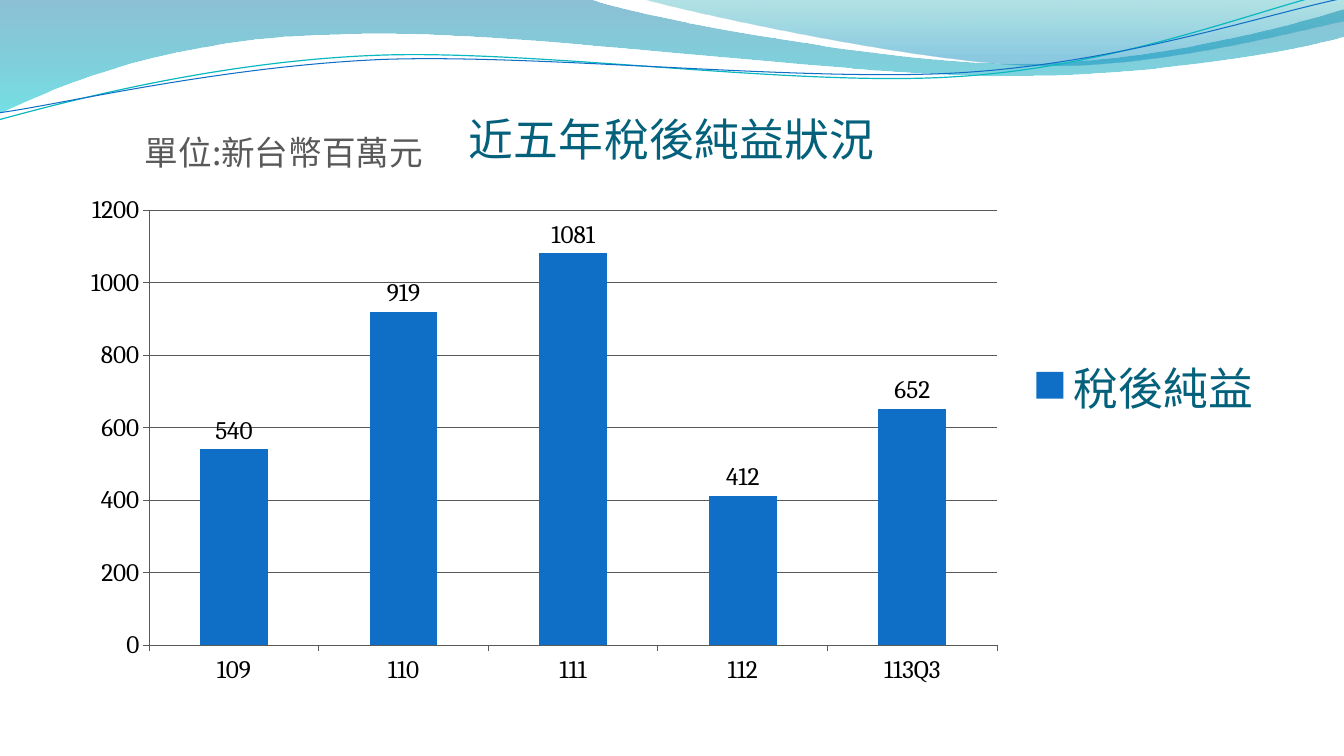
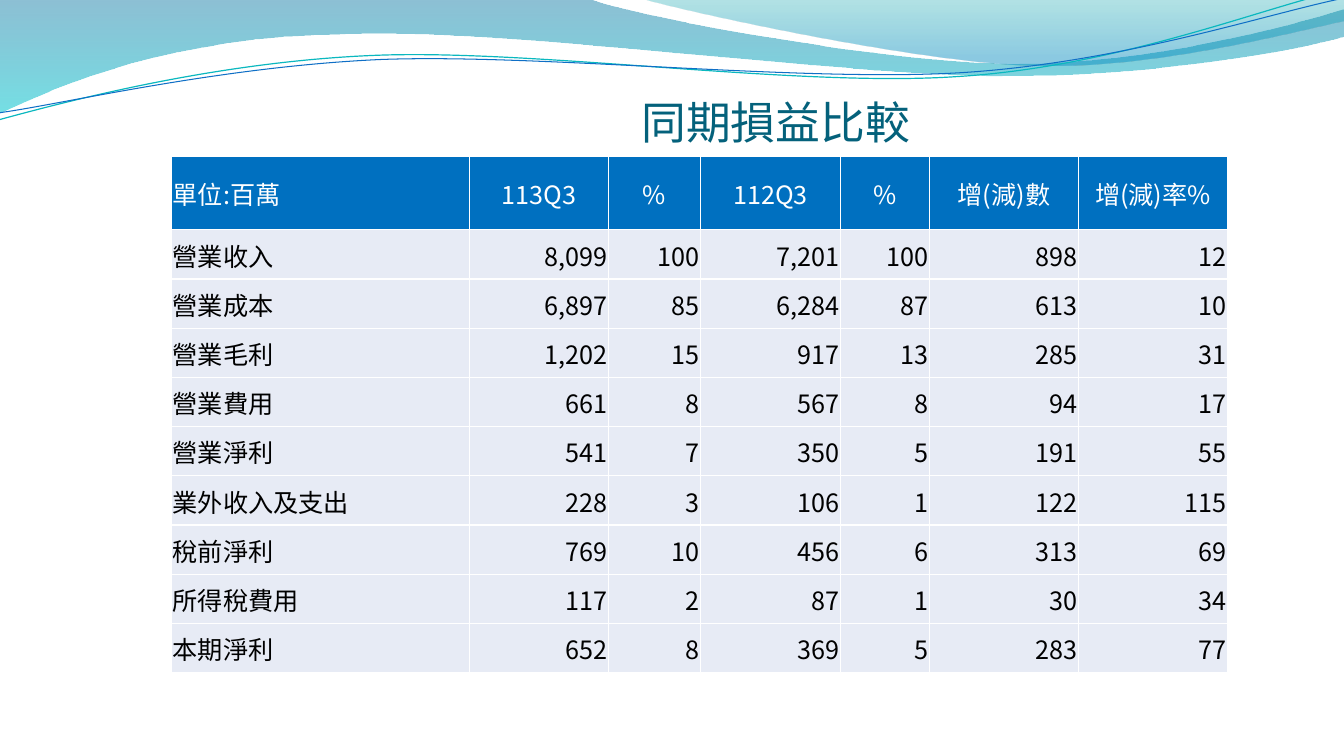
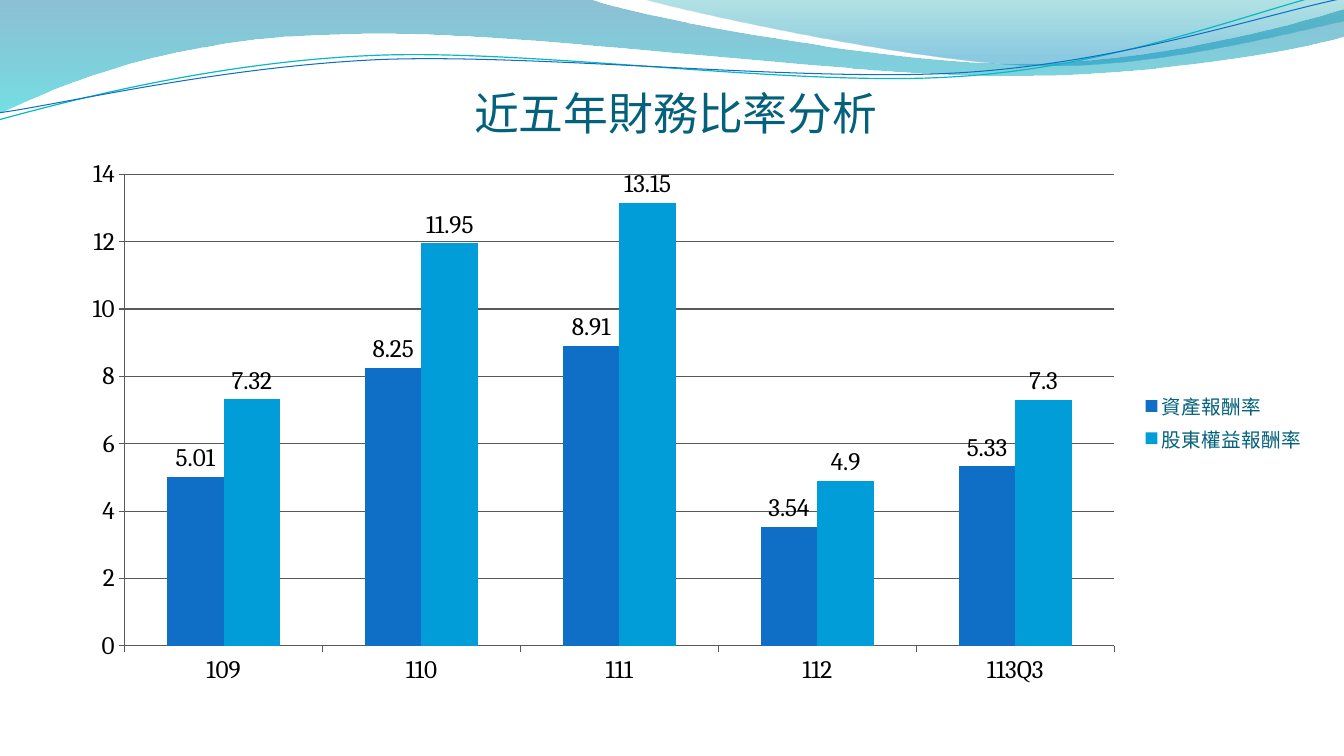
from dataclasses import dataclass
from lxml import etree
from pptx import Presentation
from pptx.chart.data import CategoryChartData
from pptx.dml.color import RGBColor
from pptx.enum.chart import XL_CHART_TYPE, XL_LABEL_POSITION, XL_LEGEND_POSITION, XL_TICK_MARK
from pptx.enum.text import MSO_ANCHOR, PP_ALIGN
from pptx.oxml.ns import qn
from pptx.util import Cm, Pt

LEFT, MID, RIGHT = PP_ALIGN.LEFT, PP_ALIGN.CENTER, PP_ALIGN.RIGHT
TOP, CENTER, BOTTOM = MSO_ANCHOR.TOP, MSO_ANCHOR.MIDDLE, MSO_ANCHOR.BOTTOM
COLUMN = XL_CHART_TYPE.COLUMN_CLUSTERED
OUT_END = XL_LABEL_POSITION.OUTSIDE_END
LEGEND_R = XL_LEGEND_POSITION.RIGHT
TICK_OUT = XL_TICK_MARK.OUTSIDE


@dataclass(frozen=True)
class Theme:
    font: str = "Noto Sans CJK SC"
    num: str = "Cambria"
    title: str = "04617B"
    grey: str = "595959"
    black: str = "000000"
    white: str = "FFFFFF"
    head: str = "0070C0"
    body: str = "E7EBF5"
    bars: tuple = ("0F6FC6", "009DD9")
    big: int = 32
    unit: int = 24
    text: int = 18
    small: int = 14


T = Theme()

# Shared waves, in cm: a pair is a line, a six is a curve
BANDS = [
    {"start": (0, 0),
     "parts": [(14.91, -0.02), (16.1, 0.43, 22.48, 1.6, 25.68, 1.6),
               (28.91, 1.6, 32.46, 0.66, 33.86, 0.23), (33.91, 0.91),
               (33.3, 1.12, 29.46, 1.93, 25.25, 1.91),
               (21.06, 1.91, 12.93, 0.71, 8.71, 0.86),
               (4.37, 0.91, 1.55, 2.11, -0.03, 2.87)],
     "stops": [(0, "0074A1", 45), (1, "00C6CF", 55)]},
    {"start": (16.23, -0.02),
     "parts": [(17.25, 0.28, 23.09, 1.57, 26.04, 1.65),
               (28.98, 1.75, 32.56, 0.81, 33.86, 0.53), (33.86, 0)],
     "stops": [(0, "00A1A9", 30), (0.8, "008BBF", 45)]},
    {"start": (-0.03, 3.02),
     "parts": [(1.63, 2.57, 5.36, 1.57, 9.37, 1.4),
               (13.39, 1.22, 20.07, 2.21, 24.13, 1.93),
               (28.19, 1.68, 31.8, 0.2, 33.81, -0.25)],
     "line": ("0AB8BF", 0.85)},
    {"start": (0, 2.84),
     "parts": [(1.6, 2.62, 5.54, 1.68, 9.6, 1.5),
               (13.64, 1.35, 20.22, 2.08, 24.26, 1.83),
               (28.32, 1.57, 31.88, 0.36, 33.88, -0.05)],
     "line": ("0F6FC6", 0.75)},
]

# Slide content
YEARS = ["109", "110", "111", "112", "113Q3"]
PROFIT = {
    "series": {"稅後純益": [540, 919, 1081, 412, 652]},
    "title": "近五年稅後純益狀況", "spot": (11.61, 2.28),
    "key": T.big, "top": 1200, "step": 200,
    "box": (1.7, 1.85, 30.48, 15.72), "plot": (3.76, 5.3, 21.37, 10.96),
}
RATIO = {
    "series": {"資產報酬率": [5.01, 8.25, 8.91, 3.54, 5.33],
               "股東權益報酬率": [7.32, 11.95, 13.15, 4.9, 7.3]},
    "key": T.small, "top": 14, "step": 2,
    "box": (1.7, 3.73, 31.47, 13.82), "plot": (3.14, 4.39, 24.94, 11.89),
}
UNIT = "單位:新台幣百萬元"
COLS = [7.51, 3.5, 2.32, 3.53, 2.24, 3.76, 3.75]
ROWS = [
    ("單位:百萬", "113Q3", "%", "112Q3", "%", "增(減)數", "增(減)率%"),
    ("營業收入", "8,099", "100", "7,201", "100", "898", "12"),
    ("營業成本", "6,897", "85", "6,284", "87", "613", "10"),
    ("營業毛利", "1,202", "15", "917", "13", "285", "31"),
    ("營業費用", "661", "8", "567", "8", "94", "17"),
    ("營業淨利", "541", "7", "350", "5", "191", "55"),
    ("業外收入及支出", "228", "3", "106", "1", "122", "115"),
    ("稅前淨利", "769", "10", "456", "6", "313", "69"),
    ("所得稅費用", "117", "2", "87", "1", "30", "34"),
    ("本期淨利", "652", "8", "369", "5", "283", "77"),
]
HIGHS = [1.85] + [1.24] * (len(ROWS) - 1)


# Text
def style(font, size, color, name=T.font):
    font.size, font.name, font.bold = Pt(size), name, False
    font.color.rgb = RGBColor.from_string(color)


def write(frame, text, size=T.text, color=T.black, align=MID):
    par = frame.paragraphs[0]
    par.alignment = align
    run = par.add_run()
    run.text = text
    style(run.font, size, color)


def add_text(slide, text, box, anchor=TOP, inset=None, wrap=True, **fmt):
    frame = slide.shapes.add_textbox(*map(Cm, box)).text_frame
    frame.word_wrap, frame.vertical_anchor = wrap, anchor
    if inset is not None:
        frame.margin_left = frame.margin_right = frame.margin_bottom = Cm(inset)
    write(frame, text, **fmt)


def add_title(slide, text, box):
    add_text(slide, text, box, anchor=BOTTOM, inset=0, size=T.big, color=T.title)


def set_asian(root):
    """Use each Latin typeface for East Asian text too."""
    for latin in list(root.iter(qn("a:latin"))):
        east = etree.Element(qn("a:ea"), typeface=latin.get("typeface"))
        latin.addnext(east)


# Waves
def bend(wave, parts):
    """Join the three points of each curve into one cubic segment."""
    nodes = iter(list(wave.element.iter(qn("a:lnTo"))))
    for part in parts:
        group = [next(nodes) for _ in range(len(part) // 2)]
        if len(group) == 1:
            continue
        curve = etree.Element(qn("a:cubicBezTo"))
        group[0].addprevious(curve)
        for node in group:
            curve.append(node[0])
            node.getparent().remove(node)


def add_band(slide, start, parts, stops=None, line=None):
    pen = slide.shapes.build_freeform(*map(Cm, start))
    pen.add_line_segments([(Cm(part[i]), Cm(part[i + 1])) for part in parts
                           for i in range(0, len(part), 2)], close=bool(stops))
    wave = pen.convert_to_shape()
    bend(wave, parts)
    wave.shadow.inherit = False
    if line:
        wave.fill.background()
        wave.line.color.rgb = RGBColor.from_string(line[0])
        wave.line.width = Pt(line[1])
        return wave
    wave.line.fill.background()
    wave.fill.gradient()
    wave.fill.gradient_angle = 270
    for stop, (pos, color, _) in zip(wave.fill.gradient_stops, stops):
        stop.position, stop.color.rgb = pos, RGBColor.from_string(color)
    for tint, (_, _, alpha) in zip(wave.element.iter(qn("a:srgbClr")), stops):
        etree.SubElement(tint, qn("a:alpha"), val=str(alpha * 1000))
    return wave


# Charts
def place(part, index, box, spot):
    """Fix a chart part at a spot given in cm on the slide."""
    layout = part.find(qn("c:layout"))
    if layout is None:
        layout = etree.Element(qn("c:layout"))
        part.insert(index, layout)
    left, top, wide, high = box
    shares = [(spot[0] - left) / wide, (spot[1] - top) / high]
    manual = etree.SubElement(layout, qn("c:manualLayout"))
    if len(spot) == 4:
        etree.SubElement(manual, qn("c:layoutTarget"), val="inner")
        shares += [spot[2] / wide, spot[3] / high]
    for key in "xy":
        etree.SubElement(manual, qn(f"c:{key}Mode"), val="edge")
    for key, share in zip("xywh", shares):
        etree.SubElement(manual, qn(f"c:{key}"), val=f"{share:.4f}")


def add_bars(slide, series, key, top, step, box, plot, title=None, spot=None):
    data = CategoryChartData()
    data.categories = YEARS
    for name, vals in series.items():
        data.add_series(name, vals)
    chart = slide.shapes.add_chart(COLUMN, *map(Cm, box), data).chart
    style(chart.font, T.text, T.black, T.num)
    root = chart.element

    chart.has_title = bool(title)
    if title:
        write(chart.chart_title.text_frame, title, size=T.big, color=T.title)
        place(next(root.iter(qn("c:title"))), 1, box, spot)
    place(next(root.iter(qn("c:plotArea"))), 0, box, plot)

    chart.has_legend = True
    chart.legend.position = LEGEND_R
    chart.legend.include_in_layout = False
    style(chart.legend.font, key, T.title)

    bars = chart.plots[0]
    bars.gap_width, bars.overlap, bars.vary_by_categories = 150, 0, False
    bars.has_data_labels = True
    bars.data_labels.show_value = True
    bars.data_labels.position = OUT_END
    for ser, color in zip(bars.series, T.bars):
        ser.format.fill.solid()
        ser.format.fill.fore_color.rgb = RGBColor.from_string(color)

    yaxis = chart.value_axis
    yaxis.minimum_scale, yaxis.maximum_scale, yaxis.major_unit = 0, top, step
    yaxis.has_major_gridlines = True
    for axis in (yaxis, chart.category_axis):
        axis.major_tick_mark = TICK_OUT
    for part in (yaxis, chart.category_axis, yaxis.major_gridlines):
        part.format.line.color.rgb = RGBColor.from_string(T.grey)
        part.format.line.width = Pt(0.75)
    set_asian(root)


# Table
def edge(cell, color):
    props = cell._tc.get_or_add_tcPr()
    for i, side in enumerate(("lnL", "lnR", "lnT", "lnB")):
        line = etree.Element(qn(f"a:{side}"), w=str(Pt(1)))
        fill = etree.SubElement(line, qn("a:solidFill"))
        etree.SubElement(fill, qn("a:srgbClr"), val=color)
        props.insert(i, line)


def add_grid(slide, rows, cols, highs, left, top):
    table = slide.shapes.add_table(len(rows), len(cols), Cm(left), Cm(top),
                                   Cm(sum(cols)), Cm(sum(highs))).table
    for col, wide in zip(table.columns, cols):
        col.width = Cm(wide)
    for r, (row, high) in enumerate(zip(rows, highs)):
        table.rows[r].height = Cm(high)
        for c, text in enumerate(row):
            cell = table.cell(r, c)
            cell.margin_left = cell.margin_right = cell.margin_top = Cm(0.03)
            cell.margin_bottom = 0
            cell.vertical_anchor = CENTER
            cell.fill.solid()
            cell.fill.fore_color.rgb = RGBColor.from_string(T.body if r else T.head)
            edge(cell, T.white)
            write(cell.text_frame, text, color=T.black if r else T.white,
                  align=LEFT if c == 0 else RIGHT if r else MID)


def main():
    deck = Presentation()
    deck.slide_width, deck.slide_height = Cm(33.87), Cm(19.05)
    blank = deck.slide_layouts[6]
    for holder in list(blank.placeholders):
        blank.shapes.element.remove(holder.element)
    profit, income, ratio = (deck.slides.add_slide(blank) for _ in range(3))

    # Waves live on the layout, so every slide shows them
    for band in BANDS:
        blank.shapes.element.append(add_band(profit, **band).element)

    # Net profit
    add_bars(profit, **PROFIT)
    add_text(profit, UNIT, (3.08, 3.2, 8.15, 1.22), wrap=False,
             size=T.unit, color=T.grey)

    # Income comparison
    add_title(income, "同期損益比較", (7.17, 2.01, 24.77, 1.73))
    add_grid(income, ROWS, COLS, HIGHS, left=4.32, top=3.94)

    # Financial ratios
    add_title(ratio, "近五年財務比率分析", (4.65, 1.96, 24.77, 1.55))
    add_bars(ratio, **RATIO)

    for slide in deck.slides:
        set_asian(slide.element)
    deck.save("out.pptx")


if __name__ == "__main__":
    main()
